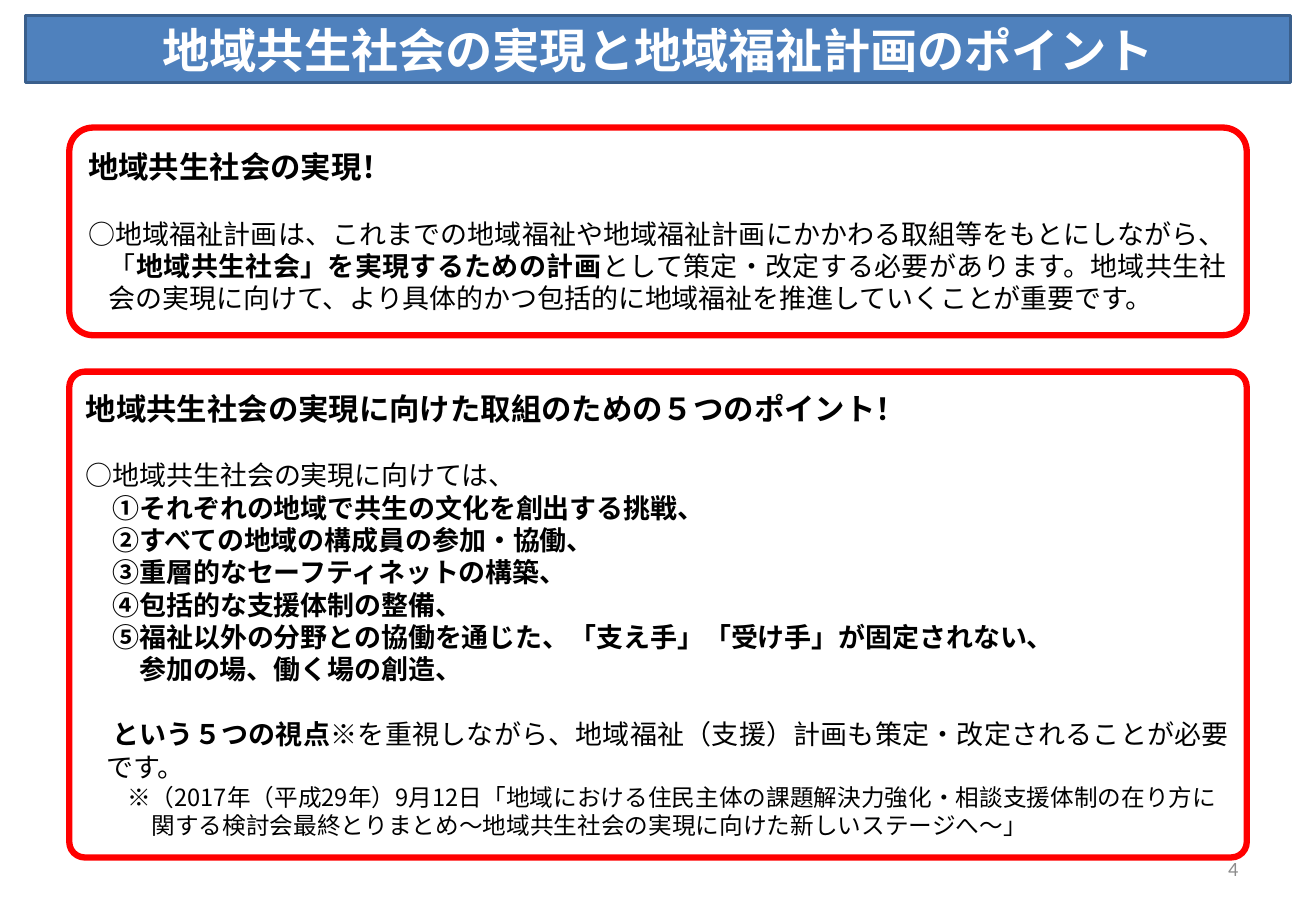
from lxml.etree import SubElement
from pptx import Presentation
from pptx.dml.color import RGBColor
from pptx.enum.shapes import MSO_SHAPE as Shape
from pptx.enum.text import MSO_ANCHOR as Anchor, PP_ALIGN as Align
from pptx.oxml.ns import qn
from pptx.util import Inches, Pt

BLUE = RGBColor(0x4F, 0x81, 0xBD)
NAVY = RGBColor(0x3A, 0x5F, 0x8C)
RED = RGBColor(0xFF, 0x00, 0x00)
WHITE = RGBColor(0xFF, 0xFF, 0xFF)
BLACK = RGBColor(0x00, 0x00, 0x00)
GRAY = RGBColor(0x8C, 0x8C, 0x8C)
LATIN = "Calibri"
CJK = "Noto Sans CJK JP"
LEAD = 1.2  # line pitch relative to the text size
GAP = 16 * LEAD

# Each line: runs of (text, bold), size, left indent, first-line shift, space after
GOAL = [
    ([("地域共生社会の実現！", True)], 18, 0.17, -0.17, GAP),
    ([("○地域福祉計画は、これまでの地域福祉や地域福祉計画にかかわる取組等をもとにしながら、「", False),
      ("地域共生社会」を実現するための計画", True),
      ("として策定・改定する必要があります。地域共生社会の実現に向けて、"
       "より具体的かつ包括的に地域福祉を推進していくことが重要です。", False)],
     16, 0.17, -0.17, 0),
]
VIEWS = [
    "①それぞれの地域で共生の文化を創出する挑戦、",
    "②すべての地域の構成員の参加・協働、",
    "③重層的なセーフティネットの構築、",
    "④包括的な支援体制の整備、",
    "⑤福祉以外の分野との協働を通じた、「支え手」「受け手」が固定されない、",
]
POINTS = [
    ([("地域共生社会の実現に向けた取組のための５つのポイント！", True)], 18, 0.17, -0.17, GAP),
    ([("○地域共生社会の実現に向けては、", False)], 16, 0.17, -0.17, 0),
    *[([(view, True)], 16, 0.22, 0, 0) for view in VIEWS],
    ([("参加の場、働く場の創造、", True)], 16, 0.44, 0, GAP),
    ([("という５つの視点", True),
      ("※を重視しながら、地域福祉（支援）計画も策定・改定されることが必要です。", False)],
     16, 0.17, 0.05, 0),
    ([("※（2017年（平成29年）9月12日「地域における住民主体の課題解決力強化・"
       "相談支援体制の在り方に", False)], 14, 0.26, 0.08, 0),
    ([("関する検討会最終とりまとめ～地域共生社会の実現に向けた新しいステージへ～」", False)],
     14, 0.54, 0, 0),
]


def place(shape, box):
    shape.left, shape.top, shape.width, shape.height = map(Inches, box)


def paint(shape, fill, edge, width):
    shape.fill.solid()
    shape.fill.fore_color.rgb = fill
    shape.line.color.rgb = edge
    shape.line.width = Pt(width)


def style(para, size, color, align, name):
    para.alignment = align
    font = para.font
    font.size, font.name, font.color.rgb = Pt(size), name, color
    props = para._p.get_or_add_pPr().find(qn("a:defRPr"))
    SubElement(props, qn("a:ea")).set("typeface", CJK)


def add_title(slide, box, text):
    title = slide.shapes.title
    place(title, box)
    paint(title, BLUE, NAVY, 2)
    frame = title.text_frame
    frame.text = text
    frame.vertical_anchor = Anchor.MIDDLE
    para = frame.paragraphs[0]
    style(para, 28, WHITE, Align.CENTER, LATIN)
    para.font.bold = True


def add_line(para, runs, size, left, first, after):
    style(para, size, BLACK, Align.JUSTIFY, CJK)
    para.line_spacing = Pt(size * LEAD)
    para.space_after = Pt(after)
    props = para._p.get_or_add_pPr()
    props.set("marL", str(Inches(left)))
    props.set("indent", str(Inches(first)))
    for text, bold in runs:
        run = para.add_run()
        run.text = text
        run.font.bold = bold


def add_panel(slide, box, curve, lines):
    panel = slide.shapes.add_shape(Shape.ROUNDED_RECTANGLE, *map(Inches, box))
    panel.shadow.inherit = False
    panel.adjustments[0] = curve
    paint(panel, WHITE, RED, 3.75)
    frame = panel.text_frame
    frame.word_wrap = True
    frame.vertical_anchor = Anchor.MIDDLE
    for i, line in enumerate(lines):
        add_line(frame.add_paragraph() if i else frame.paragraphs[0], *line)


def add_number(slide, box, text):
    frame = slide.shapes.add_textbox(*map(Inches, box)).text_frame
    frame.word_wrap = True
    frame.vertical_anchor = Anchor.MIDDLE
    frame.text = text
    style(frame.paragraphs[0], 12, GRAY, Align.RIGHT, LATIN)


def main():
    deck = Presentation()
    deck.slide_width, deck.slide_height = Inches(10.83), Inches(7.5)
    slide = deck.slides.add_slide(deck.slide_layouts[5])
    add_title(slide, (0.21, 0.13, 10.41, 0.55), "地域共生社会の実現と地域福祉計画のポイント")
    add_panel(slide, (0.57, 3.06, 9.69, 4), 0.032, POINTS)
    add_panel(slide, (0.57, 1.05, 9.69, 1.71), 0.115, GOAL)
    add_number(slide, (7.76, 6.95, 2.53, 0.4), "4")
    deck.save("out.pptx")


if __name__ == "__main__":
    main()
